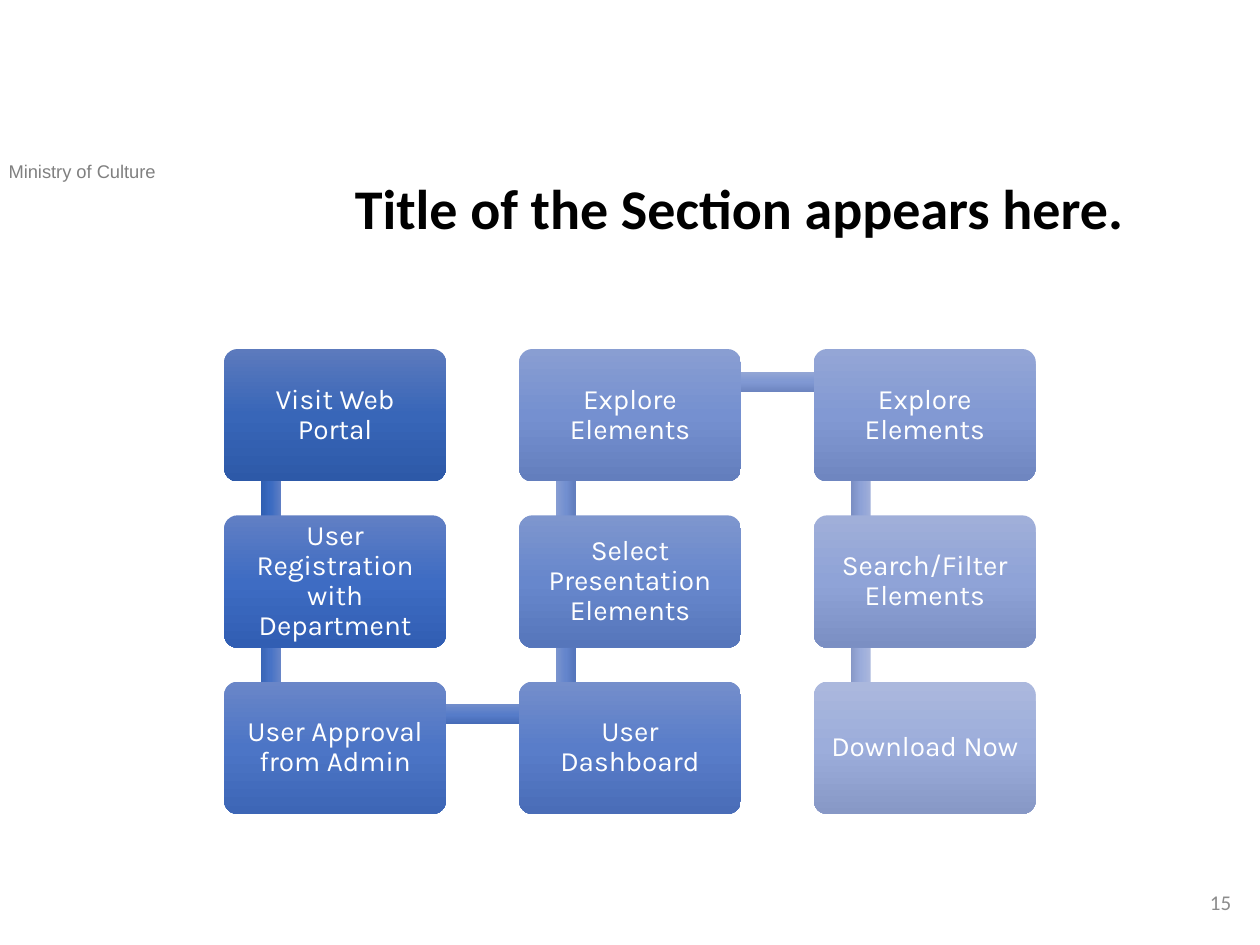
from copy import deepcopy

from pptx import Presentation
from pptx.dml.color import RGBColor
from pptx.enum.shapes import MSO_SHAPE
from pptx.enum.text import MSO_ANCHOR, MSO_AUTO_SIZE, PP_ALIGN
from pptx.util import Inches, Pt

WHITE = RGBColor(0xFF, 0xFF, 0xFF)
BLACK = RGBColor(0x00, 0x00, 0x00)
GRAY = RGBColor(0x80, 0x80, 0x80)
SILVER = RGBColor(0x8C, 0x8C, 0x8C)


def tints(*rows):
    """Turn rows of top, middle and bottom hex codes into colours."""
    return [[RGBColor.from_string(code) for code in row.split()] for row in rows]


BOX_TINTS = tints(
    "5C7ABD 3866B8 2D59A8", "617FC4 3E6CC3 315EB3", "6A86C8 4C75C6 3D66B6",
    "748ECB 597DC9 4A6DB8", "7E96CE 6787CC 5676BB", "899ED2 7590D0 637EBD",
    "94A6D6 8299D3 6F86C0", "A0AFD9 8FA3D7 7B8FC3", "ABB8DD 9CADDB 8798C6",
)
BAR_TINTS = tints(
    "5E7EC4 3B6BC1 2F5EB1", "6785C7 4873C6 3965B6", "718DCB 567CC9 476CB8",
    "7C95CE 6485CC 5475BB", "879DD2 728FD0 617DBD", "93A6D5 8098D3 6D85C0",
    "9FAED9 8EA2D7 7A8EC3", "AAB7DD 9BACDB 8697C6",
)
STEPS = [
    "Visit Web Portal", "User Registration with Department",
    "User Approval from Admin", "User Dashboard",
    "Select Presentation Elements", "Explore Elements",
    "Explore Elements", "Search/Filter Elements", "Download Now",
]
ROWS = 3
BOX_W, BOX_H = Inches(1.76), Inches(1.05)
BAR_H = Inches(0.16)
# Where the bars meet, inside each box
JOIN_X, JOIN_Y = Inches(0.37), Inches(0.26)


def style(para, font, size, color, align):
    para.alignment = align
    para.font.name = font
    para.font.size = Pt(size)
    para.font.color.rgb = color


def shade(shape, colors):
    """Fill with a three-stop gradient running from top to bottom."""
    shape.shadow.inherit = False
    shape.line.fill.background()
    fill = shape.fill
    fill.gradient()
    fill.gradient_angle = 270
    stops = shape._element.spPr.gradFill.gsLst
    stops.append(deepcopy(stops[0]))
    for stop, color, place in zip(fill.gradient_stops, colors, (0, 0.5, 1)):
        stop.color.rgb = color
        stop.position = place


def add_bar(slide, start, end, colors):
    """Join two points by a bar, turned when the path goes down or up."""
    (x1, y1), (x2, y2) = start, end
    size = abs(x2 - x1) + abs(y2 - y1)
    left = (x1 + x2 - size) // 2
    top = (y1 + y2 - BAR_H) // 2
    bar = slide.shapes.add_shape(MSO_SHAPE.RECTANGLE, left, top, size, BAR_H)
    if y1 != y2:
        bar.rotation = 90 if y2 > y1 else 270
    shade(bar, colors)


def add_step(slide, left, top, text, colors):
    box = slide.shapes.add_shape(
        MSO_SHAPE.ROUNDED_RECTANGLE, left, top, BOX_W, BOX_H)
    box.adjustments[0] = 0.1
    shade(box, colors)
    frame = box.text_frame
    frame.word_wrap = True
    frame.vertical_anchor = MSO_ANCHOR.MIDDLE
    frame.margin_left = frame.margin_right = Inches(0.07)
    frame.margin_top = frame.margin_bottom = Inches(0.07)
    frame.text = text
    para = frame.paragraphs[0]
    style(para, "Karla", 16, WHITE, PP_ALIGN.CENTER)
    para.line_spacing = 0.9


def add_flow(slide, left, top, width, height):
    """Lay the steps in a snake: down one column, up the next."""
    cols = len(STEPS) // ROWS
    step_x = (width - BOX_W) // (cols - 1)
    step_y = (height - BOX_H) // (ROWS - 1)
    spots = []
    for i in range(len(STEPS)):
        col, row = divmod(i, ROWS)
        if col % 2:
            row = ROWS - 1 - row
        spots.append((left + col * step_x, top + row * step_y))
    joins = [(x + JOIN_X, y + JOIN_Y) for x, y in spots]
    for i, (x, y) in enumerate(spots):
        if i < len(BAR_TINTS):
            add_bar(slide, joins[i], joins[i + 1], BAR_TINTS[i])
        add_step(slide, x, y, STEPS[i], BOX_TINTS[i])


def add_title(slide, left, top, width, height):
    title = slide.shapes.title
    title.left, title.top, title.width, title.height = left, top, width, height
    frame = title.text_frame
    frame.text = "Title of the Section appears here."
    frame.auto_size = MSO_AUTO_SIZE.NONE
    frame.vertical_anchor = MSO_ANCHOR.TOP
    para = frame.paragraphs[0]
    style(para, "Calibri", 32, BLACK, PP_ALIGN.CENTER)
    para.font.bold = True
    para.line_spacing = 0.9


def add_label(slide, left, top, width, height, text, font, size, color, align):
    box = slide.shapes.add_textbox(left, top, width, height)
    frame = box.text_frame
    frame.word_wrap = True
    frame.vertical_anchor = MSO_ANCHOR.MIDDLE
    frame.text = text
    style(frame.paragraphs[0], font, size, color, align)


def main():
    deck = Presentation()
    deck.slide_width, deck.slide_height = Inches(10), Inches(7.5)
    slide = deck.slides.add_slide(deck.slide_layouts[5])
    add_label(slide, Inches(-0.03), Inches(1.22), Inches(2.18), Inches(0.28),
              "Ministry of Culture", "Arial", 10.5, GRAY, PP_ALIGN.LEFT)
    add_flow(slide, Inches(1.78), Inches(2.77), Inches(6.44), Inches(3.69))
    add_label(slide, Inches(7.62), Inches(6.96), Inches(2.25), Inches(0.4),
              "15", "Calibri", 12, SILVER, PP_ALIGN.RIGHT)
    add_title(slide, Inches(2.64), Inches(1.39), Inches(6.46), Inches(0.79))
    deck.save("out.pptx")


if __name__ == "__main__":
    main()
